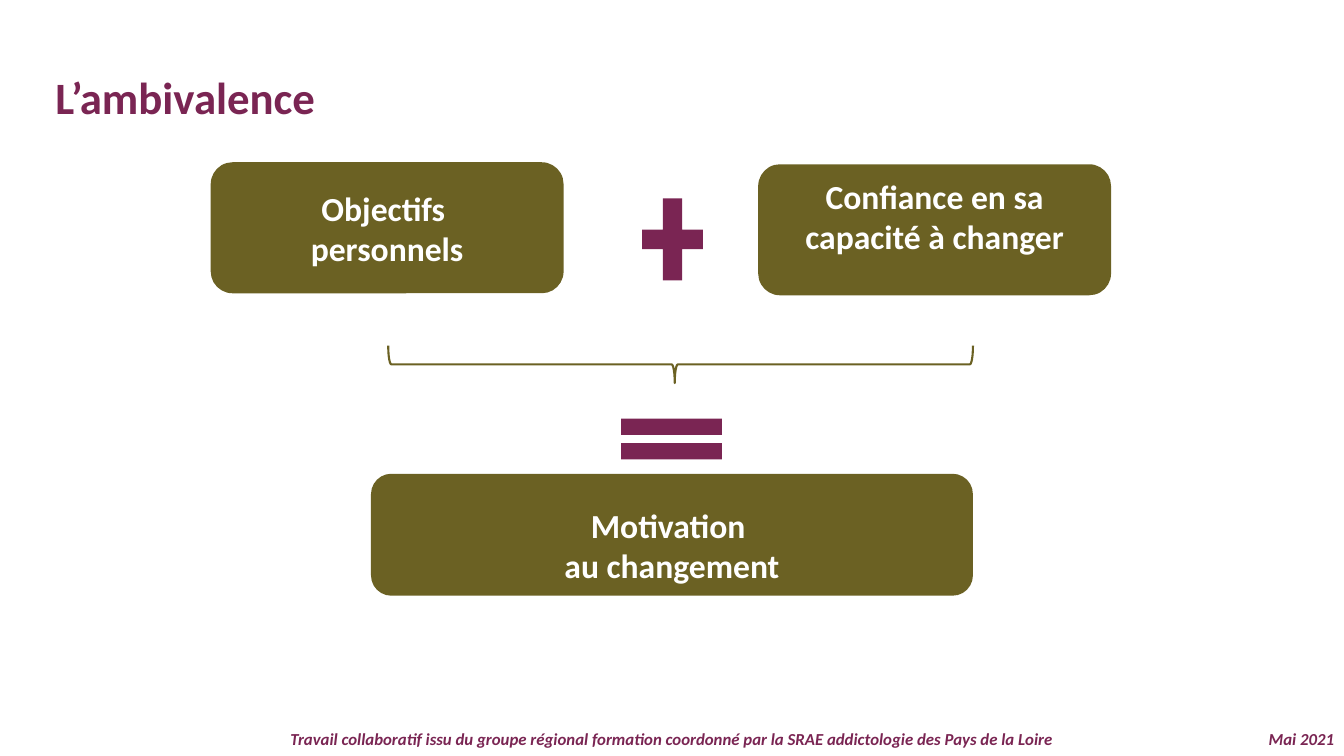
from pptx import Presentation
from pptx.dml.color import RGBColor
from pptx.enum.shapes import MSO_SHAPE
from pptx.enum.text import MSO_ANCHOR, PP_ALIGN
from pptx.util import Inches, Pt

PLUM = RGBColor(0x7A, 0x25, 0x53)
OLIVE = RGBColor(0x6B, 0x61, 0x23)
WHITE = RGBColor(0xFF, 0xFF, 0xFF)
FONT = "Calibri"
TOP, MIDDLE = MSO_ANCHOR.TOP, MSO_ANCHOR.MIDDLE
LEFT, CENTER, RIGHT = PP_ALIGN.LEFT, PP_ALIGN.CENTER, PP_ALIGN.RIGHT
ROUNDED, BRACE = MSO_SHAPE.ROUNDED_RECTANGLE, MSO_SHAPE.RIGHT_BRACE
PLUS, EQUAL = MSO_SHAPE.MATH_PLUS, MSO_SHAPE.MATH_EQUAL

SLIDE_W, SLIDE_H = 13.33, 7.5
FOOTER_H = 0.3


def write(frame, lines, size, color, align, italic=False, spacing=None):
    """Fill a text frame with one bold paragraph per line."""
    frame.word_wrap = True
    for i, line in enumerate(lines):
        paragraph = frame.paragraphs[0] if i == 0 else frame.add_paragraph()
        paragraph.text = line
        paragraph.alignment = align
        if spacing:
            paragraph.line_spacing = spacing
        font = paragraph.font
        font.name, font.size, font.bold, font.italic = FONT, Pt(size), True, italic
        font.color.rgb = color


def add_text(slide, box, text, size, align, **style):
    label = slide.shapes.add_textbox(*map(Inches, box))
    write(label.text_frame, [text], size, PLUM, align, **style)


def add_solid(slide, kind, box, color):
    solid = slide.shapes.add_shape(kind, *map(Inches, box))
    solid.shadow.inherit = False
    solid.fill.solid()
    solid.fill.fore_color.rgb = color
    solid.line.fill.background()
    return solid


def add_card(slide, box, lines, anchor=TOP, margin_top=0.05):
    frame = add_solid(slide, ROUNDED, box, OLIVE).text_frame
    frame.vertical_anchor = anchor
    frame.margin_top = Inches(margin_top)
    write(frame, lines, 24, WHITE, CENTER)


def add_brace(slide, left, top, width, height):
    """Draw a brace pointing down: a right brace turned a quarter."""
    offset = (width - height) / 2
    brace = slide.shapes.add_shape(
        BRACE, Inches(left + offset), Inches(top - offset), Inches(height), Inches(width))
    brace.rotation = 90
    brace.adjustments[0], brace.adjustments[1] = 0.083, 0.51
    brace.shadow.inherit = False
    brace.fill.background()
    brace.line.color.rgb = OLIVE
    brace.line.width = Pt(1.5)


def add_equation(slide, left, top):
    """Goals plus confidence, gathered by a brace, equal motivation."""
    add_card(slide, (left + 5.43, top + 0.02, 3.5, 1.3),
             ["Confiance en sa capacité à changer"])
    add_card(slide, (left + 1.59, top + 3.09, 5.97, 1.21),
             ["Motivation ", "au changement"], margin_top=0.25)
    add_card(slide, (left, top, 3.5, 1.3), ["Objectifs ", "personnels"], MIDDLE)
    add_solid(slide, PLUS, (left + 4.17, top + 0.21, 0.82, 1.11), PLUM)
    add_solid(slide, EQUAL, (left + 3.89, top + 2.4, 1.36, 0.69), PLUM)
    add_brace(slide, left + 1.76, top + 1.82, 5.8, 0.37)


def add_footer(slide, top):
    add_text(slide, (0, top, SLIDE_W, FOOTER_H),
             "Travail collaboratif issu du groupe régional formation coordonné "
             "par la SRAE addictologie des Pays de la Loire",
             12, CENTER, italic=True, spacing=0.9)
    date_w = 1.09
    add_text(slide, (SLIDE_W - date_w, top, date_w, FOOTER_H),
             "Mai 2021", 12, RIGHT, italic=True, spacing=0.9)


def main():
    deck = Presentation()
    deck.slide_width, deck.slide_height = Inches(SLIDE_W), Inches(SLIDE_H)
    slide = deck.slides.add_slide(deck.slide_layouts[6])
    add_footer(slide, SLIDE_H - FOOTER_H)
    add_equation(slide, 2.09, 1.61)
    add_text(slide, (0.45, 0.64, 12.88, 0.64), "L’ambivalence", 32, LEFT)
    deck.save("out.pptx")


if __name__ == "__main__":
    main()
